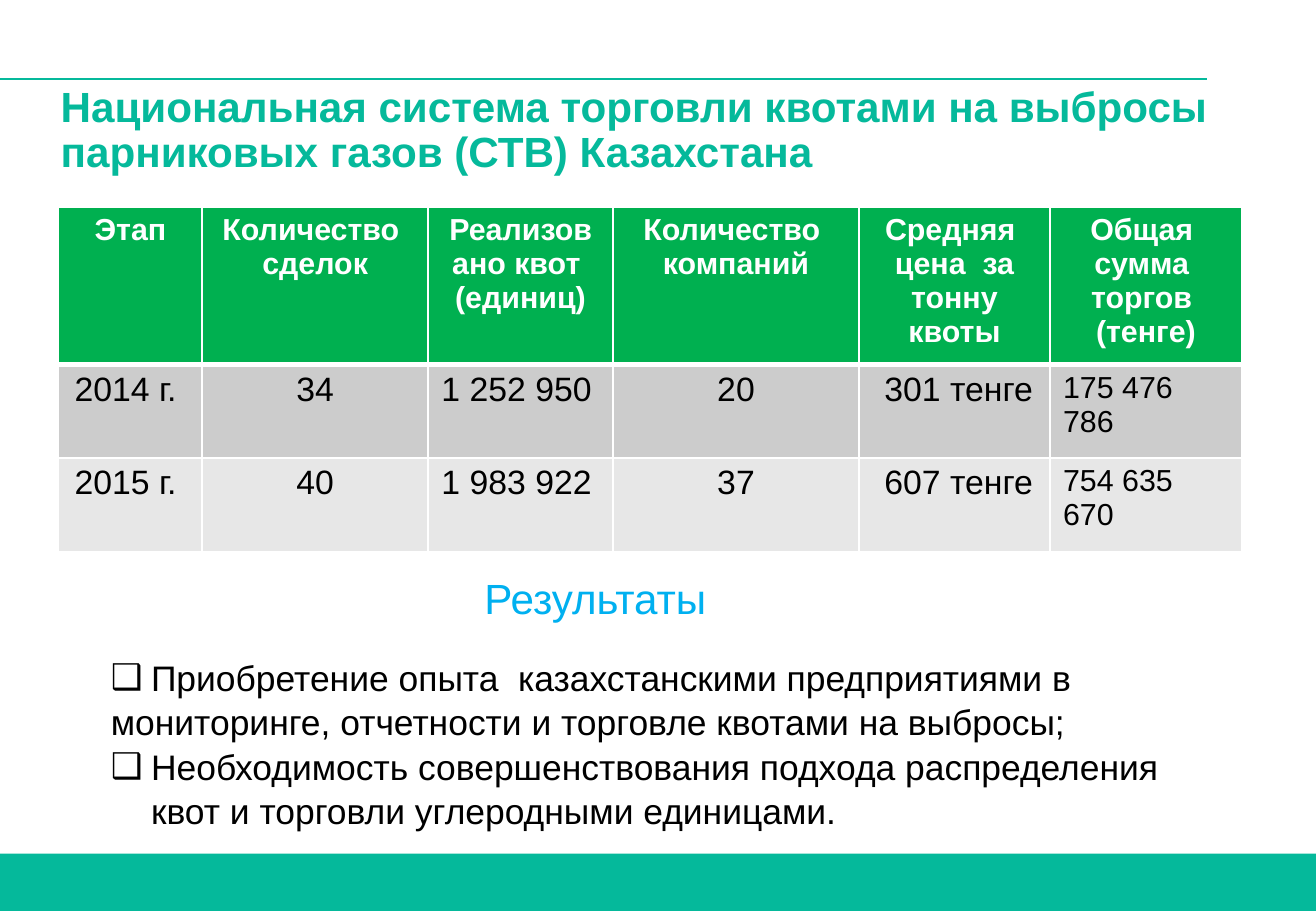
from lxml.etree import SubElement
from pptx import Presentation
from pptx.dml.color import RGBColor
from pptx.enum.shapes import MSO_CONNECTOR as Connector, MSO_SHAPE as Shape
from pptx.enum.text import MSO_ANCHOR as Anchor, MSO_AUTO_SIZE as AutoSize, PP_ALIGN as Align
from pptx.oxml.ns import qn
from pptx.util import Pt

COLORS = {
    "teal": "05B99B", "blue": "00B0F0", "green": "00B050", "white": "FFFFFF",
    "black": "000000", "dark_band": "CCCCCC", "light_band": "E7E7E7",
}
TITLE = "Национальная система торговли квотами на выбросы парниковых газов (СТВ) Казахстана"
HEADERS = [
    ["Этап"],
    ["Количество ", "сделок"],
    ["Реализовано квот ", "(единиц)"],
    ["Количество ", "компаний"],
    ["Средняя ", "цена  за", " тонну ", "квоты"],
    ["Общая ", "сумма ", "торгов ", "(тенге)"],
]
STAGES = [
    ["2014 г.", "34", "1 252 950", "20", " 301 тенге", "175 476 786"],
    ["2015 г.", "40", "1 983 922", "37", " 607 тенге", "754 635 670"],
]
RESULTS_HEADING = "Результаты"
RESULTS = [
    ("Приобретение опыта  казахстанскими предприятиями в ", True, Align.JUSTIFY),
    ("мониторинге, отчетности и торговле квотами на выбросы;", False, Align.JUSTIFY),
    ("Необходимость совершенствования подхода распределения "
     "квот и торговли углеродными единицами.", True, Align.LEFT),
]
COLUMN_WIDTHS = [85, 134, 109.5, 146, 113, 114]
ROW_HEIGHTS = [93.6, 55.4, 55.4]
CENTERED_COLUMNS = {1, 3}
NARROW_COLUMNS = {2, 5}
BULLET_INDENT = 23.8


def color(name):
    return RGBColor.from_string(COLORS[name])


def place(item, left, top, width, height):
    item.left, item.top, item.width, item.height = map(Pt, (left, top, width, height))


def write(frame, lines, size, fill, bold=False, align=Align.LEFT, spacing=1.0,
          margins=(7.2, 3.6), anchor=Anchor.TOP):
    frame.margin_left = frame.margin_right = Pt(margins[0])
    frame.margin_top = frame.margin_bottom = Pt(margins[1])
    frame.word_wrap = True
    frame.vertical_anchor = anchor
    for index, line in enumerate(lines):
        text, bullet, line_align = line if isinstance(line, tuple) else (line, None, align)
        para = frame.paragraphs[0] if index == 0 else frame.add_paragraph()
        if bullet is not None:
            properties = para._p.get_or_add_pPr()
            indent = Pt(BULLET_INDENT) if bullet else 0
            properties.set("marL", str(indent))
            properties.set("indent", str(-indent))
            if bullet:
                SubElement(properties, qn("a:buChar"), char="❑")
            else:
                SubElement(properties, qn("a:buNone"))
        para.alignment = line_align
        para.line_spacing = spacing
        para.space_before = Pt(0)
        span = para.add_run()
        span.text = text
        span.font.name = "Arial"
        span.font.size = Pt(size)
        span.font.bold = bold
        span.font.color.rgb = color(fill)


def set_borders(cell, top, bottom):
    properties = cell._tc.get_or_add_tcPr()
    sides = (("a:lnL", 1), ("a:lnR", 1), ("a:lnT", top), ("a:lnB", bottom))
    for position, (side, width) in enumerate(sides):
        line = SubElement(properties, qn(side), w=str(Pt(width)))
        SubElement(SubElement(line, qn("a:solidFill")), qn("a:srgbClr"), val=COLORS["white"])
        properties.insert(position, line)


def add_table(page):
    rows = [HEADERS] + [[[value] for value in stage] for stage in STAGES]
    table = page.shapes.add_table(
        len(rows), len(HEADERS), Pt(34.8), Pt(122.6),
        Pt(sum(COLUMN_WIDTHS)), Pt(sum(ROW_HEIGHTS))).table
    for column, width in zip(table.columns, COLUMN_WIDTHS):
        column.width = Pt(width)
    for row, height in zip(table.rows, ROW_HEIGHTS):
        row.height = Pt(height)
    bands = ["green", "dark_band", "light_band"]
    for r, values in enumerate(rows):
        for c, lines in enumerate(values):
            header = r == 0
            cell = table.cell(r, c)
            cell.fill.solid()
            cell.fill.fore_color.rgb = color(bands[r])
            set_borders(cell, top=3 if r == 1 else 1, bottom=3 if header else 1)
            margin = 7.9 if c in NARROW_COLUMNS and not header else 9.4
            write(cell.text_frame, lines,
                  size=18 if header or c == len(values) - 1 else 20,
                  fill="white" if header else "black", bold=header,
                  align=Align.CENTER if header or c in CENTERED_COLUMNS else Align.LEFT)
            cell.margin_left = cell.margin_right = Pt(margin)
            cell.margin_top = cell.margin_bottom = Pt(3.6)
            cell.vertical_anchor = Anchor.TOP


def main():
    deck = Presentation()
    deck.slide_width, deck.slide_height = Pt(780), Pt(540)
    page = deck.slides.add_slide(deck.slide_layouts[1])

    band = page.shapes.add_shape(Shape.RECTANGLE, 0, Pt(506), Pt(780), Pt(34))
    band.shadow.inherit = False
    band.fill.solid()
    band.fill.fore_color.rgb = color("teal")
    band.line.fill.background()

    rule = page.shapes.add_connector(Connector.STRAIGHT, 0, Pt(46.8), Pt(715.7), Pt(46.8))
    rule.line.color.rgb = color("teal")
    rule.line.width = Pt(0.75)
    SubElement(rule._element.spPr, qn("a:effectLst"))

    title = page.shapes.title
    place(title, 36, 15, 702, 90)
    title.text_frame.auto_size = AutoSize.NONE
    write(title.text_frame, [TITLE], size=25, fill="teal", bold=True, spacing=0.9,
          margins=(0, 0), anchor=Anchor.BOTTOM)

    add_table(page)

    heading = page.shapes.add_textbox(Pt(280), Pt(335.5), Pt(209), Pt(38))
    write(heading.text_frame, [RESULTS_HEADING], size=25, fill="blue")

    body = page.placeholders[1]
    place(body, 58.5, 383.8, 645, 109.4)
    body.text_frame.auto_size = AutoSize.NONE
    write(body.text_frame, RESULTS, size=21, fill="black", spacing=1.05)

    deck.save("out.pptx")


if __name__ == "__main__":
    main()
